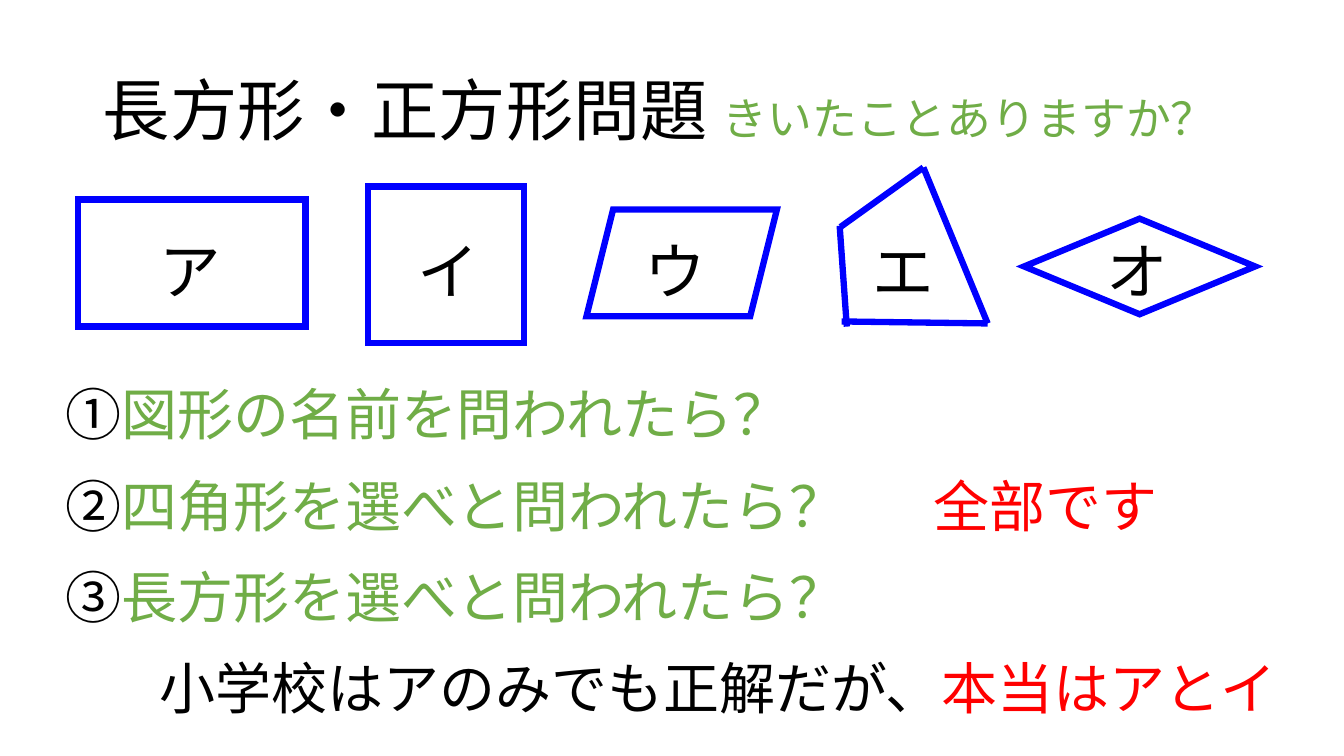
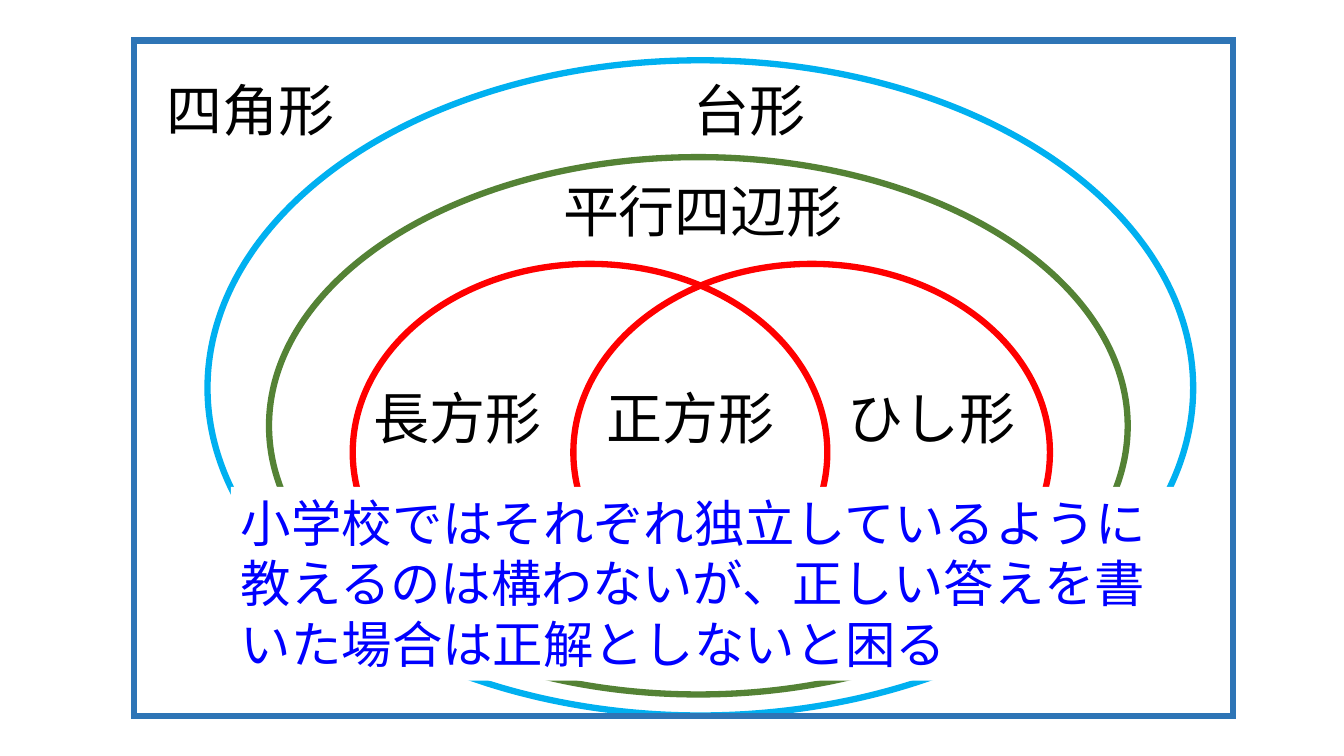
from lxml import etree
from pptx import Presentation
from pptx.dml.color import RGBColor
from pptx.enum.shapes import MSO_CONNECTOR, MSO_SHAPE
from pptx.enum.text import MSO_ANCHOR, MSO_AUTO_SIZE, PP_ALIGN
from pptx.oxml.ns import qn
from pptx.util import Cm, Pt

RECT = MSO_SHAPE.RECTANGLE
OVAL = MSO_SHAPE.OVAL
SLANT = MSO_SHAPE.PARALLELOGRAM
GEM = MSO_SHAPE.DIAMOND
STRAIGHT = MSO_CONNECTOR.STRAIGHT
TOP, MIDDLE = MSO_ANCHOR.TOP, MSO_ANCHOR.MIDDLE
NO_FIT = MSO_AUTO_SIZE.NONE
LEFT = PP_ALIGN.LEFT

FONT = "Noto Sans CJK JP"
BLACK, WHITE, RED, BLUE = "000000", "FFFFFF", "FF0000", "0000FF"
GREEN, SKY, FRAME, LEAF = "70AD47", "00B0F0", "2E75B6", "548235"
STROKE = 4.5
ROW_H = 1.96


def color(code):
    return RGBColor.from_string(code)


def box(*sizes):
    return [Cm(size) for size in sizes]


def write(shape, runs, size=40, ink=BLACK, anchor=TOP, wrap=True, space=None):
    frame = shape.text_frame
    frame.word_wrap = wrap
    frame.auto_size = NO_FIT
    frame.vertical_anchor = anchor
    line = frame.paragraphs[0]
    line.alignment = LEFT
    line.line_spacing = space
    for text, *style in runs:
        run = line.add_run()
        run.text = text
        shade, points = (style + [ink, size][len(style):])
        font = run.font
        font.name, font.size = FONT, Pt(points)
        font.color.rgb = color(shade)
        east = etree.SubElement(font._element, qn("a:ea"))
        east.set("typeface", FONT)


def label(slide, place, *runs, **style):
    item = slide.shapes.add_textbox(*box(*place))
    write(item, runs, **style)
    return item


def stroke(item, ink):
    item.line.color.rgb = color(ink)
    item.line.width = Pt(STROKE)
    miter = etree.SubElement(item.line._get_or_add_ln(), qn("a:miter"))
    miter.set("lim", "800000")


def outline(slide, kind, place, ink=BLUE, fill=None):
    item = slide.shapes.add_shape(kind, *box(*place))
    item.shadow.inherit = False
    if fill:
        item.fill.solid()
        item.fill.fore_color.rgb = color(fill)
    else:
        item.fill.background()
    stroke(item, ink)


def edge(slide, start, end):
    item = slide.shapes.add_connector(STRAIGHT, *box(*start, *end))
    stroke(item, BLUE)
    etree.SubElement(item._element.spPr, qn("a:effectLst"))


def quiz(deck):
    slide = deck.slides.add_slide(deck.slide_layouts[5])
    title = slide.shapes.title
    title.left, title.top, title.width, title.height = box(2.34, 1.02, 29.21, 3.68)
    write(title, [("長方形・正方形問題 ",), ("きいたことありますか？", GREEN, 32)],
          size=48, anchor=MIDDLE, space=0.9)

    for kind, place in (
        (RECT, (1.96, 5.03, 5.74, 3.2)),
        (RECT, (9.27, 4.7, 3.94, 3.94)),
        (SLANT, (14.78, 5.28, 4.8, 2.69)),
        (GEM, (25.81, 5.51, 5.82, 2.41)),
    ):
        outline(slide, kind, place)
    peak, foot = (23.27, 4.22), (24.89, 8.15)
    for start, end in (
        ((21.16, 5.69), (21.34, 8.23)),
        ((21.21, 8.1), foot),
        ((21.18, 5.72), peak),
        (peak, foot),
    ):
        edge(slide, start, end)
    for text, left in zip("アイウエオ", (3.78, 10.26, 16, 21.74, 27.64)):
        label(slide, (left, 5.74, 2.08, 2.13), (text,), size=44, wrap=False)

    rows = [9.45 + 2.3 * step for step in range(4)]
    asks = (
        ("①", "図形の名前を問われたら？"),
        ("②", "四角形を選べと問われたら？"),
        ("③", "長方形を選べと問われたら？"),
    )
    for top, (mark, ask) in zip(rows, asks):
        label(slide, (1.4, top, 20.68, ROW_H), (mark,), (ask, GREEN))
    label(slide, (3.78, rows[3], 29.11, ROW_H),
          ("小学校はアのみでも正解だが、",), ("本当はアとイ", RED))
    label(slide, (23.27, rows[1], 6.43, ROW_H), ("全部です",), ink=RED)


def venn(deck):
    slide = deck.slides.add_slide(deck.slide_layouts[6])
    for kind, place, ink, fill in (
        (OVAL, (5.23, 1.52, 24.84, 16.51), SKY, None),
        (RECT, (3.38, 1.02, 27.69, 17.02), FRAME, None),
        (OVAL, (14.45, 6.65, 12.01, 9.5), RED, WHITE),
        (OVAL, (8.89, 6.65, 11.96, 9.5), RED, None),
        (OVAL, (6.78, 3.96, 21.64, 13.54), LEAF, None),
    ):
        outline(slide, kind, place, ink, fill)
    for text, left, top, width in (
        ("正方形", 15.04, 9.53, 5.08),
        ("長方形", 9.17, 9.53, 5.08),
        ("ひし形", 21.11, 9.55, 5.08),
        ("平行四辺形", 13.94, 4.32, 7.98),
        ("台形", 17.22, 1.78, 4.06),
        ("四角形", 3.94, 1.78, 4.93),
    ):
        label(slide, (left, top, width, ROW_H), (text,))
    note = label(
        slide, (5.82, 12.27, 24.08, 4.88),
        ("小学校ではそれぞれ独立しているように教えるのは構わないが、"
         "正しい答えを書いた場合は正解としないと困る",),
        size=36, ink=BLUE)
    note.fill.solid()
    note.fill.fore_color.rgb = color(WHITE)


def main():
    deck = Presentation()
    deck.slide_width, deck.slide_height = box(33.87, 19.05)
    quiz(deck)
    venn(deck)
    deck.save("out.pptx")


if __name__ == "__main__":
    main()
